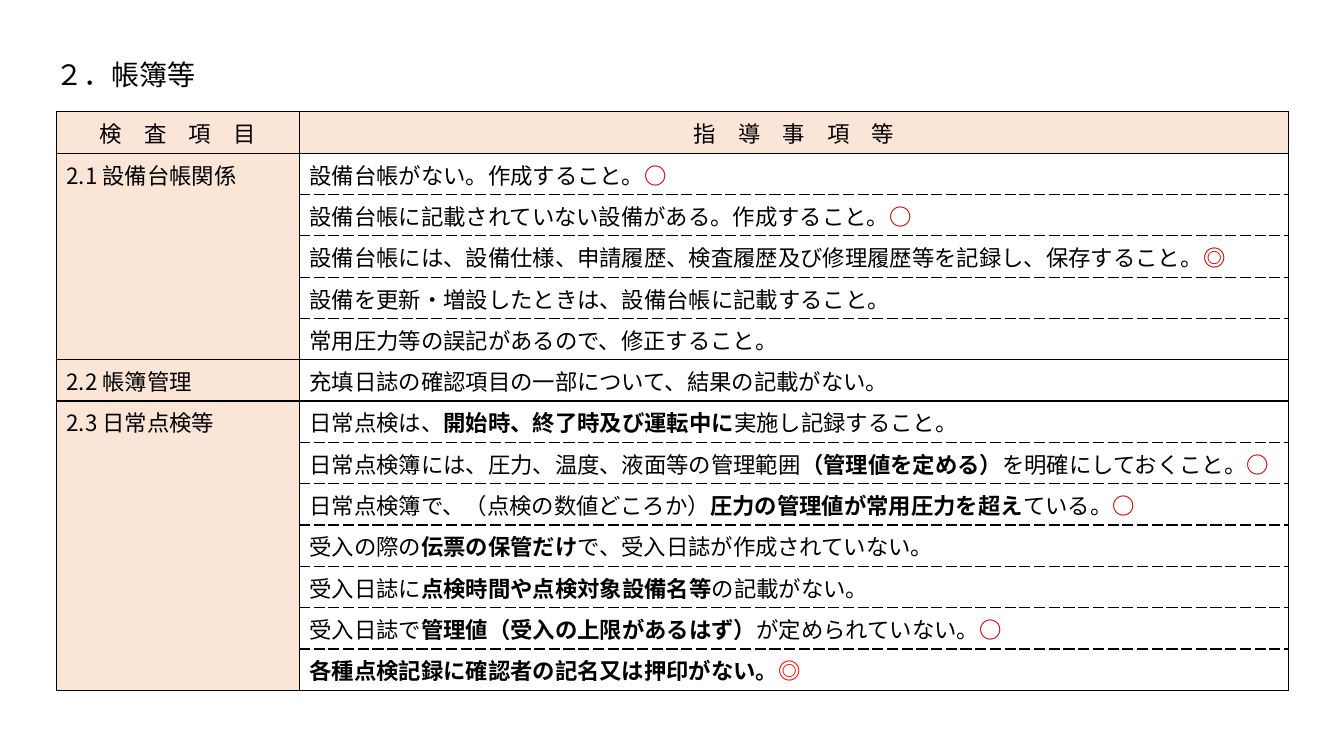
from lxml.etree import SubElement
from pptx import Presentation
from pptx.dml.color import RGBColor
from pptx.enum.text import MSO_ANCHOR, PP_ALIGN
from pptx.oxml.ns import qn
from pptx.util import Pt

PX = 9144  # 100 px to the inch
FONT = "Noto Sans CJK JP"
BLACK, RED, DARK_RED, PEACH = "000000", "FF0000", "C00000", "FBE5D6"
HEADINGS = ["検　査　項　目", "指　導　事　項　等"]

# Each item: text with bold parts between asterisks, mark, mark colour
SECTIONS = [
    ("2.1 設備台帳関係", [
        ("設備台帳がない。作成すること。", "○", DARK_RED),
        ("設備台帳に記載されていない設備がある。作成すること。", "○", DARK_RED),
        ("設備台帳には、設備仕様、申請履歴、検査履歴及び修理履歴等を記録し、保存すること。", "◎", DARK_RED),
        ("設備を更新・増設したときは、設備台帳に記載すること。", "", BLACK),
        ("常用圧力等の誤記があるので、修正すること。", "", BLACK),
    ]),
    ("2.2 帳簿管理", [
        ("充填日誌の確認項目の一部について、結果の記載がない。", "", BLACK),
    ]),
    ("2.3 日常点検等", [
        ("日常点検は、*開始時、終了時及び運転中に*実施し記録すること。", "", BLACK),
        ("日常点検簿には、圧力、温度、液面等の管理範囲*（管理値を定める）*を明確にしておくこと。", "○", DARK_RED),
        ("日常点検簿で、（点検の数値どころか）*圧力の管理値が常用圧力を超え*ている。", "○", DARK_RED),
        ("受入の際の*伝票の保管だけ*で、受入日誌が作成されていない。", "", BLACK),
        ("受入日誌に*点検時間や点検対象設備名等*の記載がない。", "", BLACK),
        ("受入日誌で*管理値（受入の上限があるはず）*が定められていない。", "○", DARK_RED),
        ("*各種点検記録に確認者の記名又は押印がない。*", "◎", RED),
    ]),
]


def add_run(p, text, size=16, color=BLACK, bold=False):
    r = p.add_run()
    r.text = text
    r.font.size = Pt(size)
    r.font.name = FONT
    r.font.bold = bold
    r.font.color.rgb = RGBColor.from_string(color)
    SubElement(r.font._element, qn("a:ea"), typeface=FONT)


def style_cell(cell, fill, **dashes):
    """Fill the cell and draw the sides given as L, R, T, B = dash name."""
    tcPr = cell._tc.get_or_add_tcPr()
    for side in "LRTB":
        if side in dashes:
            ln = SubElement(tcPr, qn(f"a:ln{side}"), w=str(Pt(1)))
            solid = SubElement(ln, qn("a:solidFill"))
            SubElement(solid, qn("a:srgbClr"), val=BLACK)
            SubElement(ln, qn("a:prstDash"), val=dashes[side])
    if fill:
        cell.fill.solid()
        cell.fill.fore_color.rgb = RGBColor.from_string(fill)
    else:
        cell.fill.background()


prs = Presentation()
prs.slide_width, prs.slide_height = 1333 * PX, 750 * PX
s = prs.slides.add_slide(prs.slide_layouts[6])

title = s.shapes.add_textbox(45 * PX, 54 * PX, 292 * PX, 39 * PX)
tf = title.text_frame
tf.word_wrap = True
tf.vertical_anchor = MSO_ANCHOR.MIDDLE
add_run(tf.paragraphs[0], "２．帳簿等", size=20)

row_count = 1 + sum(len(items) for _, items in SECTIONS)
table = s.shapes.add_table(row_count, 2, 56 * PX, 111 * PX,
                           1222 * PX, row_count * 41 * PX).table
table.first_row = table.horz_banding = False
table.columns[0].width, table.columns[1].width = 241 * PX, 981 * PX

for col, heading in enumerate(HEADINGS):
    cell = table.cell(0, col)
    p = cell.text_frame.paragraphs[0]
    p.alignment = PP_ALIGN.CENTER
    add_run(p, heading)
    style_cell(cell, PEACH, L="solid", R="solid", T="solid", B="solid")

row = 1
for name, items in SECTIONS:
    last = len(items) - 1
    section = table.cell(row, 0)
    add_run(section.text_frame.paragraphs[0], name)
    if last:
        section.merge(table.cell(row + last, 0))
    for i, (text, mark, mark_color) in enumerate(items):
        sides = {"L": "solid", "R": "solid"}
        if i == 0:
            style_cell(section, PEACH, T="solid", B="solid", **sides)
        elif i == last:
            style_cell(table.cell(row, 0), PEACH, B="solid", **sides)
        else:
            style_cell(table.cell(row, 0), PEACH, **sides)

        cell = table.cell(row, 1)
        p = cell.text_frame.paragraphs[0]
        for k, part in enumerate(text.split("*")):
            if part:
                add_run(p, part, bold=k % 2 == 1)
        if mark:
            add_run(p, mark, color=mark_color, bold=True)
        style_cell(cell, None, T="solid" if i == 0 else "sysDash",
                   B="solid" if i == last else "sysDash", **sides)
        row += 1

prs.save("out.pptx")
